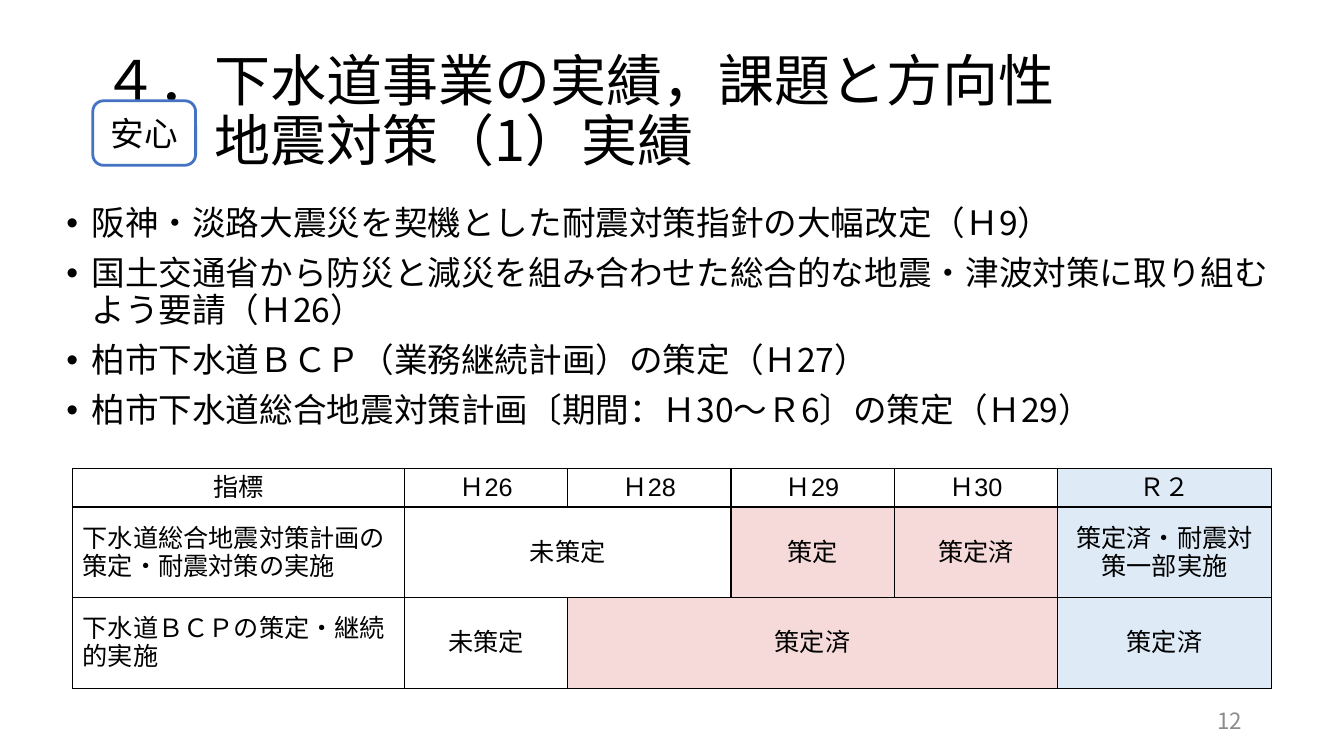
"""Build the slide on sewerage earthquake measures."""
from dataclasses import dataclass

from lxml.etree import SubElement
from pptx import Presentation
from pptx.dml.color import RGBColor
from pptx.enum.shapes import MSO_SHAPE
from pptx.enum.text import MSO_ANCHOR, MSO_AUTO_SIZE, PP_ALIGN
from pptx.oxml.ns import qn
from pptx.slide import Slide
from pptx.table import _Cell
from pptx.text.text import TextFrame, _Paragraph, _Run
from pptx.util import Inches, Pt


@dataclass(frozen=True)
class Theme:
    """Colours, fonts and type sizes of the slide."""

    ink: str = "000000"
    paper: str = "FFFFFF"
    accent: str = "4472C4"
    decided: str = "F6DADA"
    latest: str = "DEEBF7"
    muted: str = "8C8C8C"
    sans: str = "Noto Sans CJK JP"
    latin: str = "Arial"
    title: int = 40
    body: int = 24
    table: int = 18
    number: int = 16


@dataclass(frozen=True)
class Entry:
    """One table cell with its place, fill and column span."""

    row: int
    column: int
    text: str
    fill: str
    span: int = 1


THEME = Theme()
BULLETS = (
    "阪神・淡路大震災を契機とした耐震対策指針の大幅改定（Ｈ9）",
    "国土交通省から防災と減災を組み合わせた総合的な地震・津波対策に取り組むよう要請（Ｈ26）",
    "柏市下水道ＢＣＰ（業務継続計画）の策定（Ｈ27）",
    "柏市下水道総合地震対策計画〔期間：Ｈ30～Ｒ6〕の策定（Ｈ29）",
)
HEADINGS = ("指標", "Ｈ26", "Ｈ28", "Ｈ29", "Ｈ30", "Ｒ２")
COLUMN_WIDTHS = (3.29, 1.62, 1.62, 1.62, 1.62, 2.12)
ROW_HEIGHTS = (0.37, 0.9, 0.9)
ENTRIES = (
    *(Entry(0, column, heading, THEME.latest if heading == "Ｒ２" else THEME.paper)
      for column, heading in enumerate(HEADINGS)),
    Entry(1, 0, "下水道総合地震対策計画の策定・耐震対策の実施", THEME.paper),
    Entry(1, 1, "未策定", THEME.paper, 2),
    Entry(1, 3, "策定", THEME.decided),
    Entry(1, 4, "策定済", THEME.decided),
    Entry(1, 5, "策定済・耐震対策一部実施", THEME.latest),
    Entry(2, 0, "下水道ＢＣＰの策定・継続的実施", THEME.paper),
    Entry(2, 1, "未策定", THEME.paper),
    Entry(2, 2, "策定済", THEME.decided, 3),
    Entry(2, 5, "策定済", THEME.latest),
)


def style_run(run: _Run, size: int, face: str, color: str = THEME.ink) -> None:
    """Give a run its size, colour and Latin and East Asian fonts."""
    for name, value in {"size": Pt(size), "name": face, "bold": False}.items():
        setattr(run.font, name, value)
    run.font.color.rgb = RGBColor.from_string(color)
    SubElement(run.font._element, qn("a:ea"), typeface=face)


def set_frame(frame: TextFrame, anchor: MSO_ANCHOR) -> None:
    """Wrap a text frame and fix its size and anchor."""
    settings = {"word_wrap": True, "auto_size": MSO_AUTO_SIZE.NONE, "vertical_anchor": anchor}
    for name, value in settings.items():
        setattr(frame, name, value)


def hang(paragraph: _Paragraph, indent: float) -> None:
    """Indent every line of a paragraph but the first."""
    properties = paragraph._p.get_or_add_pPr()
    properties.set("marL", str(Inches(indent)))
    properties.set("indent", str(-Inches(indent)))


def add_title(slide: Slide) -> None:
    """Place the two-line title."""
    title = slide.shapes.title
    title.left, title.top, title.width, title.height = map(Inches, (0.92, 0.4, 11.5, 1.45))
    set_frame(title.text_frame, MSO_ANCHOR.MIDDLE)
    heading = title.text_frame.paragraphs[0]
    heading.alignment = PP_ALIGN.LEFT
    heading.line_spacing = 0.9
    hang(heading, 1.11)
    section = heading.add_run()
    section.text = "４．下水道事業の実績，課題と方向性"
    style_run(section, THEME.title, THEME.latin)
    heading.add_line_break()
    topic = heading.add_run()
    topic.text = "地震対策（1）実績"
    style_run(topic, THEME.title, THEME.sans)


def add_bullets(slide: Slide) -> None:
    """Place the bulleted history."""
    history = slide.shapes.add_textbox(*map(Inches, (0.56, 2, 12.31, 2.54))).text_frame
    set_frame(history, MSO_ANCHOR.TOP)
    for index, text in enumerate(BULLETS):
        event = history.add_paragraph() if index else history.paragraphs[0]
        event.line_spacing = 0.9
        event.space_before = Pt(10)
        hang(event, 0.25)
        properties = event._p.get_or_add_pPr()
        SubElement(properties, qn("a:buFont"), typeface=THEME.latin)
        SubElement(properties, qn("a:buChar"), char="•")
        run = event.add_run()
        run.text = text
        style_run(run, THEME.body, THEME.sans)


def add_badge(slide: Slide) -> None:
    """Place the outlined theme badge."""
    badge = slide.shapes.add_shape(
        MSO_SHAPE.ROUNDED_RECTANGLE, *map(Inches, (0.92, 1, 1.02, 0.64)))
    badge.shadow.inherit = False
    badge.fill.background()
    badge.line.color.rgb = RGBColor.from_string(THEME.accent)
    badge.line.width = Pt(2)
    set_frame(badge.text_frame, MSO_ANCHOR.MIDDLE)
    label = badge.text_frame.paragraphs[0]
    label.alignment = PP_ALIGN.CENTER
    run = label.add_run()
    run.text = "安心"
    style_run(run, THEME.body, THEME.sans)


def add_page_number(slide: Slide) -> None:
    """Place the page number."""
    footer = slide.shapes.add_textbox(*map(Inches, (9.42, 6.95, 3, 0.4))).text_frame
    set_frame(footer, MSO_ANCHOR.MIDDLE)
    footer.paragraphs[0].alignment = PP_ALIGN.RIGHT
    run = footer.paragraphs[0].add_run()
    run.text = "12"
    style_run(run, THEME.number, THEME.sans, THEME.muted)


def outline_cell(cell: _Cell) -> None:
    """Draw thin borders on all four sides of a cell."""
    properties = cell._tc.get_or_add_tcPr()
    for side in ("lnL", "lnR", "lnT", "lnB"):
        border = SubElement(properties, qn(f"a:{side}"), w=str(Pt(1)))
        fill = SubElement(border, qn("a:solidFill"))
        SubElement(fill, qn("a:srgbClr"), val=THEME.ink)


def add_indicators(slide: Slide) -> None:
    """Place the table of indicators by year."""
    frame = slide.shapes.add_table(
        len(ROW_HEIGHTS), len(COLUMN_WIDTHS), *map(Inches, (0.72, 4.65, 11.88, 2.2)))
    table = frame.table
    table.first_row = table.horz_banding = False
    for column, width in zip(table.columns, COLUMN_WIDTHS):
        column.width = Inches(width)
    for row, height in zip(table.rows, ROW_HEIGHTS):
        row.height = Inches(height)
    for cell in table.iter_cells():
        outline_cell(cell)
    for entry in ENTRIES:
        cell = table.cell(entry.row, entry.column)
        if entry.span > 1:
            cell.merge(table.cell(entry.row, entry.column + entry.span - 1))
        cell.fill.solid()
        cell.fill.fore_color.rgb = RGBColor.from_string(entry.fill)
        cell.vertical_anchor = MSO_ANCHOR.MIDDLE if entry.row else MSO_ANCHOR.TOP
        content = cell.text_frame.paragraphs[0]
        is_indicator = entry.row and not entry.column
        content.alignment = PP_ALIGN.LEFT if is_indicator else PP_ALIGN.CENTER
        run = content.add_run()
        run.text = entry.text
        style_run(run, THEME.table, THEME.latin)


def main() -> None:
    """Build and save the slide."""
    deck = Presentation()
    deck.slide_width, deck.slide_height = Inches(13.33), Inches(7.5)
    slide = deck.slides.add_slide(deck.slide_layouts[5])
    for draw in (add_title, add_bullets, add_page_number, add_badge, add_indicators):
        draw(slide)
    deck.save("out.pptx")


if __name__ == "__main__":
    main()
